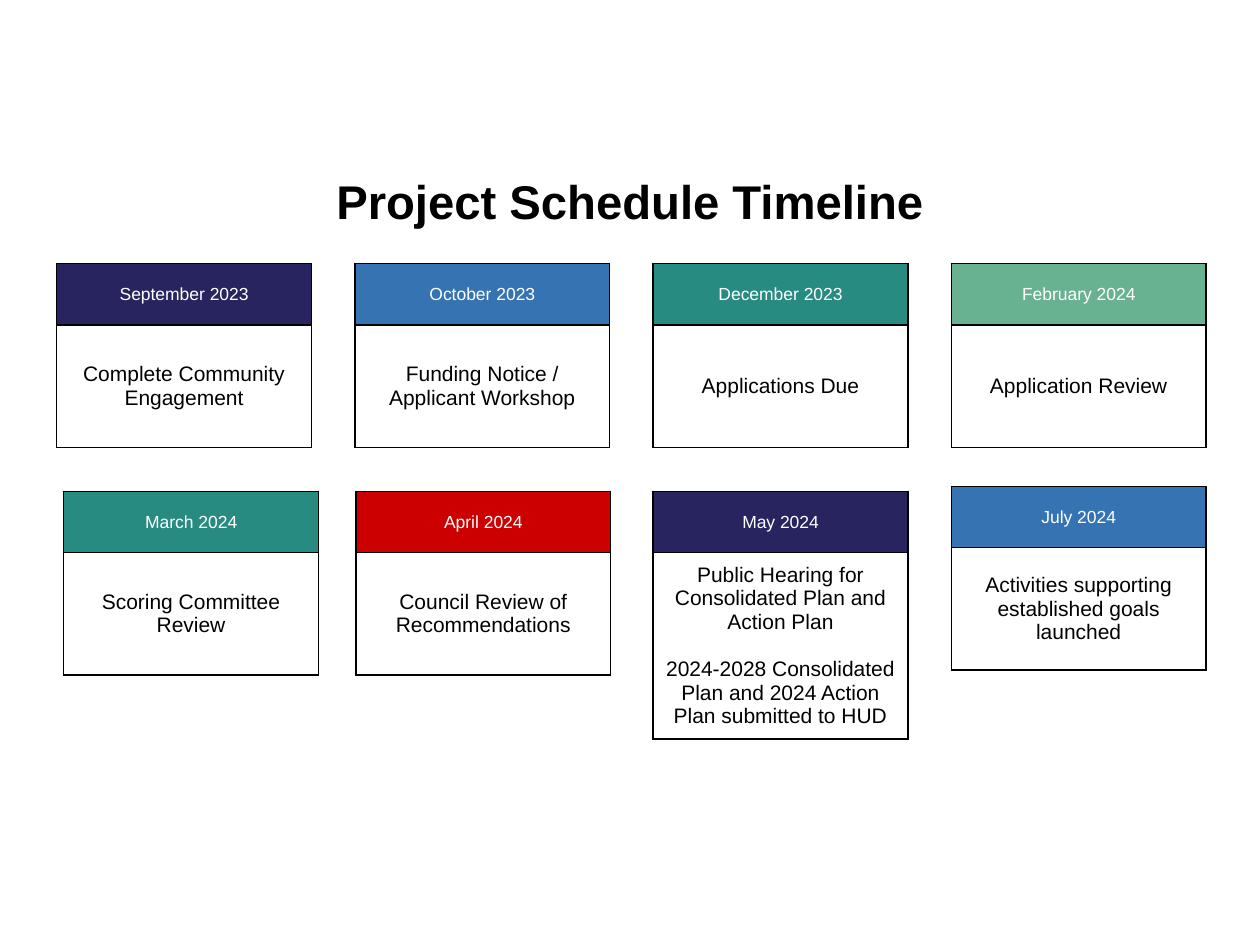
from dataclasses import dataclass
from lxml import etree
from pptx import Presentation
from pptx.dml.color import RGBColor
from pptx.enum.text import MSO_ANCHOR, PP_ALIGN
from pptx.oxml.ns import qn
from pptx.util import Pt

CENTER = PP_ALIGN.CENTER
MIDDLE = MSO_ANCHOR.MIDDLE
TITLE_ONLY = 5


@dataclass(frozen=True)
class Theme:
    font: str = "Arial"
    black: str = "000000"
    white: str = "FFFFFF"
    navy: str = "28245F"
    blue: str = "3573B3"
    teal: str = "278B82"
    green: str = "68B291"
    red: str = "CC0000"
    title_size: float = 27
    month_size: float = 10
    task_size: float = 12
    border: float = 1


THEME = Theme()
CARD_WIDTH = 145.6
MONTH_HEIGHT = 35
TASK_HEIGHT = 70
TALL_TASK_HEIGHT = 106.4
FIRST_LEFT = 32.4
COLUMN_PITCH = 170.4
FIRST_TOP = 150.6
ROW_PITCH = 130.2
PARAGRAPH_GAP = 13.5

MILESTONES = [
    [
        ("September 2023", THEME.navy, ["Complete Community Engagement"], {}),
        ("October 2023", THEME.blue, ["Funding Notice / Applicant Workshop"], {}),
        ("December 2023", THEME.teal, ["Applications Due"], {}),
        ("February 2024", THEME.green, ["Application Review"], {}),
    ],
    [
        ("March 2024", THEME.teal, ["Scoring Committee Review"], {"shift_x": 4}),
        ("April 2024", THEME.red, ["Council Review of Recommendations"], {"shift_x": 0.6}),
        ("May 2024", THEME.navy,
         ["Public Hearing for Consolidated Plan and Action Plan",
          "2024-2028 Consolidated Plan and 2024 Action Plan submitted to HUD"],
         {"task_height": TALL_TASK_HEIGHT}),
        ("July 2024", THEME.blue, ["Activities supporting established goals launched"],
         {"shift_y": -2.8}),
    ],
]


def write_text(frame, paragraphs, *, size, color, bold=False, gap=0):
    for index, words in enumerate(paragraphs):
        paragraph = frame.paragraphs[0] if index == 0 else frame.add_paragraph()
        paragraph.alignment = CENTER
        paragraph.space_before = Pt(gap if index else 0)
        run = paragraph.add_run()
        run.text = words
        run.font.name = THEME.font
        run.font.size = Pt(size)
        run.font.bold = bold
        run.font.color.rgb = RGBColor.from_string(color)


def add_title(slide, words):
    title = slide.shapes.title
    title.left, title.top, title.width, title.height = Pt(0), Pt(96.5), Pt(720), Pt(36)
    frame = title.text_frame
    frame.margin_left = frame.margin_right = frame.margin_top = frame.margin_bottom = 0
    frame.vertical_anchor = MIDDLE
    frame.word_wrap = True
    write_text(frame, [words], size=THEME.title_size, color=THEME.black, bold=True)


def outline_cell(cell):
    properties = cell._tc.get_or_add_tcPr()
    for side in ("a:lnL", "a:lnR", "a:lnT", "a:lnB"):
        line = etree.SubElement(properties, qn(side), w=str(Pt(THEME.border)))
        fill = etree.SubElement(line, qn("a:solidFill"))
        etree.SubElement(fill, qn("a:srgbClr"), val=THEME.black)


def format_cell(cell, paragraphs, *, fill, **text_format):
    cell.margin_left = cell.margin_right = Pt(5)
    cell.margin_top = cell.margin_bottom = Pt(2.9)
    cell.vertical_anchor = MIDDLE
    outline_cell(cell)
    cell.fill.solid()
    cell.fill.fore_color.rgb = RGBColor.from_string(fill)
    write_text(cell.text_frame, paragraphs, **text_format)


def add_milestone(slide, left, top, month, color, tasks, *,
                  shift_x=0, shift_y=0, task_height=TASK_HEIGHT):
    card = slide.shapes.add_table(
        2, 1, Pt(left + shift_x), Pt(top + shift_y),
        Pt(CARD_WIDTH), Pt(MONTH_HEIGHT + task_height)).table
    card.first_row = card.horz_banding = False
    card.rows[0].height = Pt(MONTH_HEIGHT)
    card.rows[1].height = Pt(task_height)
    format_cell(card.cell(0, 0), [month], fill=color,
                size=THEME.month_size, color=THEME.white)
    format_cell(card.cell(1, 0), tasks, fill=THEME.white,
                size=THEME.task_size, color=THEME.black, gap=PARAGRAPH_GAP)


def main():
    deck = Presentation()
    deck.slide_width, deck.slide_height = Pt(720), Pt(540)
    slide = deck.slides.add_slide(deck.slide_layouts[TITLE_ONLY])
    add_title(slide, "Project Schedule Timeline")
    for row, milestones in enumerate(MILESTONES):
        for column, (month, color, tasks, placement) in enumerate(milestones):
            add_milestone(slide, FIRST_LEFT + column * COLUMN_PITCH,
                          FIRST_TOP + row * ROW_PITCH, month, color, tasks, **placement)
    deck.save("out.pptx")


if __name__ == "__main__":
    main()
